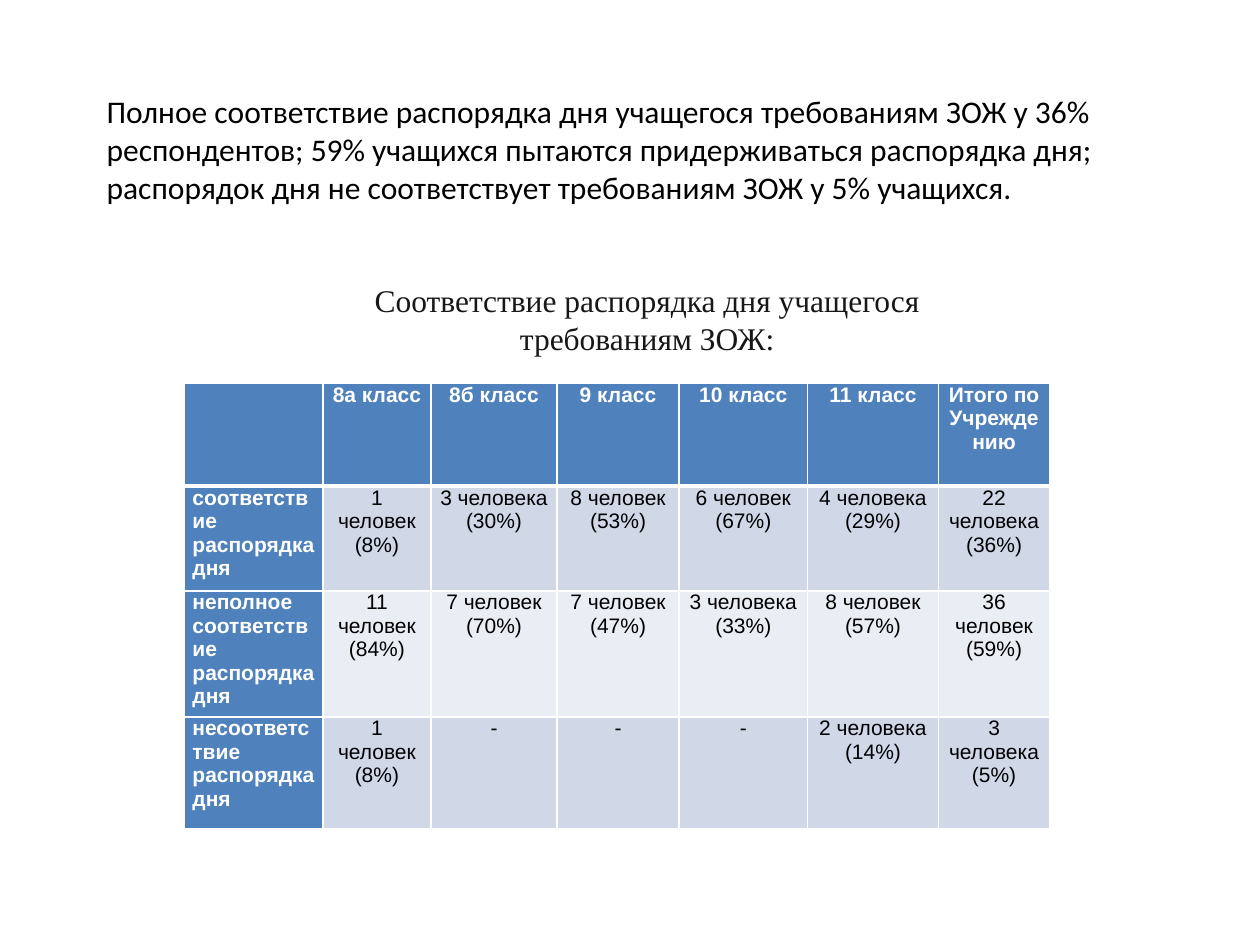
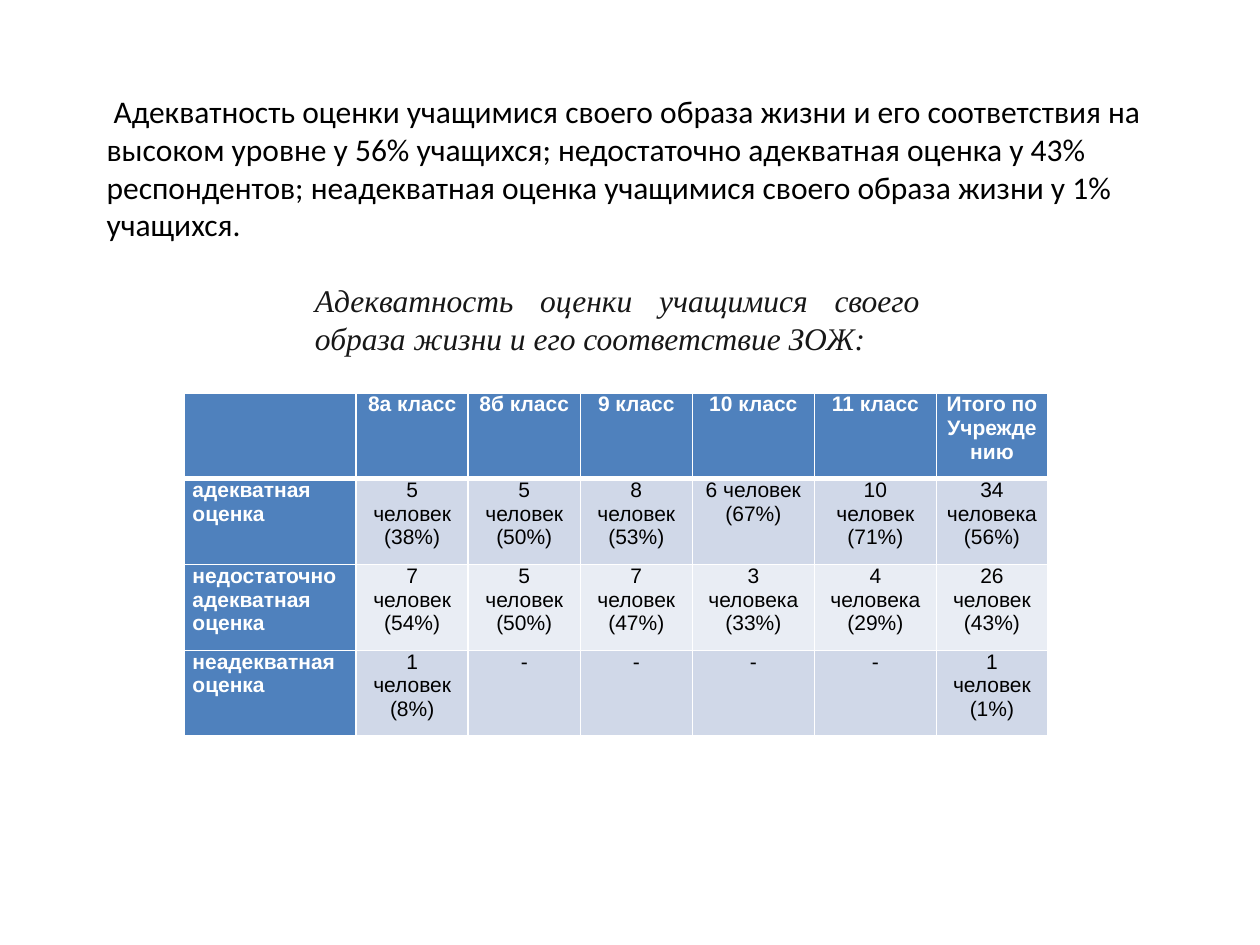
from dataclasses import dataclass
from typing import Any, Optional

from lxml import etree
from pptx import Presentation
from pptx import util as u
from pptx.dml.color import RGBColor
from pptx.enum import text
from pptx.oxml.ns import qn

BLACK, WHITE, DARK = "000000", "FFFFFF", "171717"
BLUE, BANDS = "4F81BD", ("D0D8E8", "E9EDF4")
ALIGN = text.PP_ALIGN
HEADERS = ["", "8а класс", "8б класс", "9 класс", "10 класс", "11 класс",
           "Итого по Учреждению"]
BODY_FONT = {"name": "Calibri", "size": u.Pt(18)}
HEADING_FONT = {"name": "Times New Roman", "size": u.Pt(18)}
CELL_FONT = {"name": "Arial", "size": u.Pt(12)}
CELL_FORMAT = {"margin_left": u.Cm(0.17), "margin_right": u.Cm(0.17),
               "margin_top": 0, "margin_bottom": 0}

Answer = Optional[tuple[int, int]]  # people, percent


@dataclass
class TextBlock:
    text: str
    left: float
    top: float
    width: float
    height: float
    font: dict[str, Any]
    color: str
    align: ALIGN = ALIGN.LEFT
    first_indent: float = 0
    grow: bool = False


@dataclass
class SurveyTable:
    top: float
    col_widths: list[float]
    row_heights: list[float]
    rows: list[tuple[str, list[Answer]]]
    left: float = 3.71


@dataclass
class SurveySlide:
    summary: TextBlock
    heading: TextBlock
    table: SurveyTable


def rgb(color: str) -> RGBColor:
    return RGBColor.from_string(color)


def set_all(target: Any, values: dict[str, Any]) -> None:
    for name, value in values.items():
        setattr(target, name, value)


def format_paragraphs(tf: Any, align: ALIGN, font: dict[str, Any], color: str) -> None:
    for p in tf.paragraphs:
        p.alignment = align
        set_all(p.font, font)
        for r in p.runs:
            set_all(r.font, font)
            r.font.color.rgb = rgb(color)


def add_text(s: Any, block: TextBlock) -> None:
    box = map(u.Cm, (block.left, block.top, block.width, block.height))
    tf = s.shapes.add_textbox(*box).text_frame
    tf.word_wrap = True
    if block.grow:
        tf.auto_size = text.MSO_AUTO_SIZE.SHAPE_TO_FIT_TEXT
    tf.text = block.text
    if block.first_indent:
        tf.paragraphs[0]._p.get_or_add_pPr().set("indent", str(u.Cm(block.first_indent)))
    format_paragraphs(tf, block.align, block.font, block.color)


def add_borders(cell: Any, bottom: float) -> None:
    tc_pr = cell._tc.get_or_add_tcPr()
    for tag, points in (("a:lnL", 1), ("a:lnR", 1), ("a:lnT", 1), ("a:lnB", bottom)):
        ln = etree.SubElement(tc_pr, qn(tag), w=str(u.Pt(points)))
        fill = etree.SubElement(ln, qn("a:solidFill"))
        etree.SubElement(fill, qn("a:srgbClr"), val=WHITE)


def answer_text(answer: Answer) -> str:
    """Two lines, people and percent, with the noun agreeing with the number."""
    if answer is None:
        return "-"
    people, percent = answer
    few = people % 10 in (2, 3, 4) and people not in (12, 13, 14)
    return f"{people} {'человека' if few else 'человек'}\n({percent}%)"


def add_table(s: Any, table: SurveyTable) -> None:
    grid = [HEADERS] + [[label, *map(answer_text, answers)] for label, answers in table.rows]
    tbl = s.shapes.add_table(
        len(grid), len(HEADERS), u.Cm(table.left), u.Cm(table.top),
        u.Cm(sum(table.col_widths)), u.Cm(sum(table.row_heights))).table
    tbl.first_row = tbl.horz_banding = False
    for col, width in zip(tbl.columns, table.col_widths):
        col.width = u.Cm(width)
    for row, height in zip(tbl.rows, table.row_heights):
        row.height = u.Cm(height)
    for i, values in enumerate(grid):
        for j, value in enumerate(values):
            cell = tbl.cell(i, j)
            head = i == 0 or j == 0
            set_all(cell, CELL_FORMAT)
            # The line under the header is shared with the first answer row
            add_borders(cell, bottom=3 if i == 0 else 1)
            if i == 1:
                cell._tc.tcPr.find(qn("a:lnT")).set("w", str(u.Pt(3)))
            cell.fill.solid()
            cell.fill.fore_color.rgb = rgb(BLUE if head else BANDS[(i - 1) % 2])
            cell.text_frame.text = value
            format_paragraphs(
                cell.text_frame, ALIGN.LEFT if i and j == 0 else ALIGN.CENTER,
                CELL_FONT | {"bold": head}, WHITE if head else BLACK)


SLIDES = [
    SurveySlide(
        TextBlock("Полное соответствие распорядка дня учащегося требованиям ЗОЖ у 36% "
                  "респондентов; 59% учащихся пытаются придерживаться распорядка дня; "
                  "распорядок дня не соответствует требованиям ЗОЖ у 5% учащихся.",
                  1.9, 1.73, 22.86, 3.07, BODY_FONT, BLACK),
        TextBlock("Соответствие распорядка дня учащегося требованиям ЗОЖ:",
                  6.7, 5.54, 12.7, 1.8, HEADING_FONT, DARK, ALIGN.CENTER, grow=True),
        SurveyTable(
            7.72, [2.8, 2.18, 2.54, 2.46, 2.59, 2.64, 2.24], [2.08, 2.11, 2.39, 2.26],
            [("соответствие распорядка дня",
              [(1, 8), (3, 30), (8, 53), (6, 67), (4, 29), (22, 36)]),
             ("неполное соответствие распорядка дня",
              [(11, 84), (7, 70), (7, 47), (3, 33), (8, 57), (36, 59)]),
             ("несоответствие распорядка дня",
              [(1, 8), None, None, None, (2, 14), (3, 5)])])),
    SurveySlide(
        TextBlock("Адекватность оценки учащимися своего образа жизни и его соответствия на "
                  "высоком уровне у 56% учащихся; недостаточно адекватная оценка у 43% "
                  "респондентов; неадекватная оценка учащимися своего образа жизни у 1% "
                  "учащихся.",
                  1.9, 1.73, 22.2, 3.4, BODY_FONT, BLACK, first_indent=0.14),
        TextBlock("Адекватность оценки учащимися своего образа жизни и его соответствие ЗОЖ:",
                  6.1, 5.54, 12.7, 1.8, HEADING_FONT | {"italic": True}, DARK,
                  ALIGN.JUSTIFY, grow=True),
        SurveyTable(
            7.92, [3.47, 2.26, 2.26, 2.26, 2.46, 2.46, 2.24], [1.73] * 4,
            [("адекватная оценка",
              [(5, 38), (5, 50), (8, 53), (6, 67), (10, 71), (34, 56)]),
             ("недостаточно адекватная оценка",
              [(7, 54), (5, 50), (7, 47), (3, 33), (4, 29), (26, 43)]),
             ("неадекватная оценка",
              [(1, 8), None, None, None, None, (1, 1)])])),
]


def main() -> None:
    prs = Presentation()
    prs.slide_width, prs.slide_height = u.Cm(25.4), u.Cm(19.05)
    for survey in SLIDES:
        s = prs.slides.add_slide(prs.slide_layouts[6])
        add_text(s, survey.summary)
        add_table(s, survey.table)
        add_text(s, survey.heading)
    prs.save("out.pptx")


if __name__ == "__main__":
    main()
